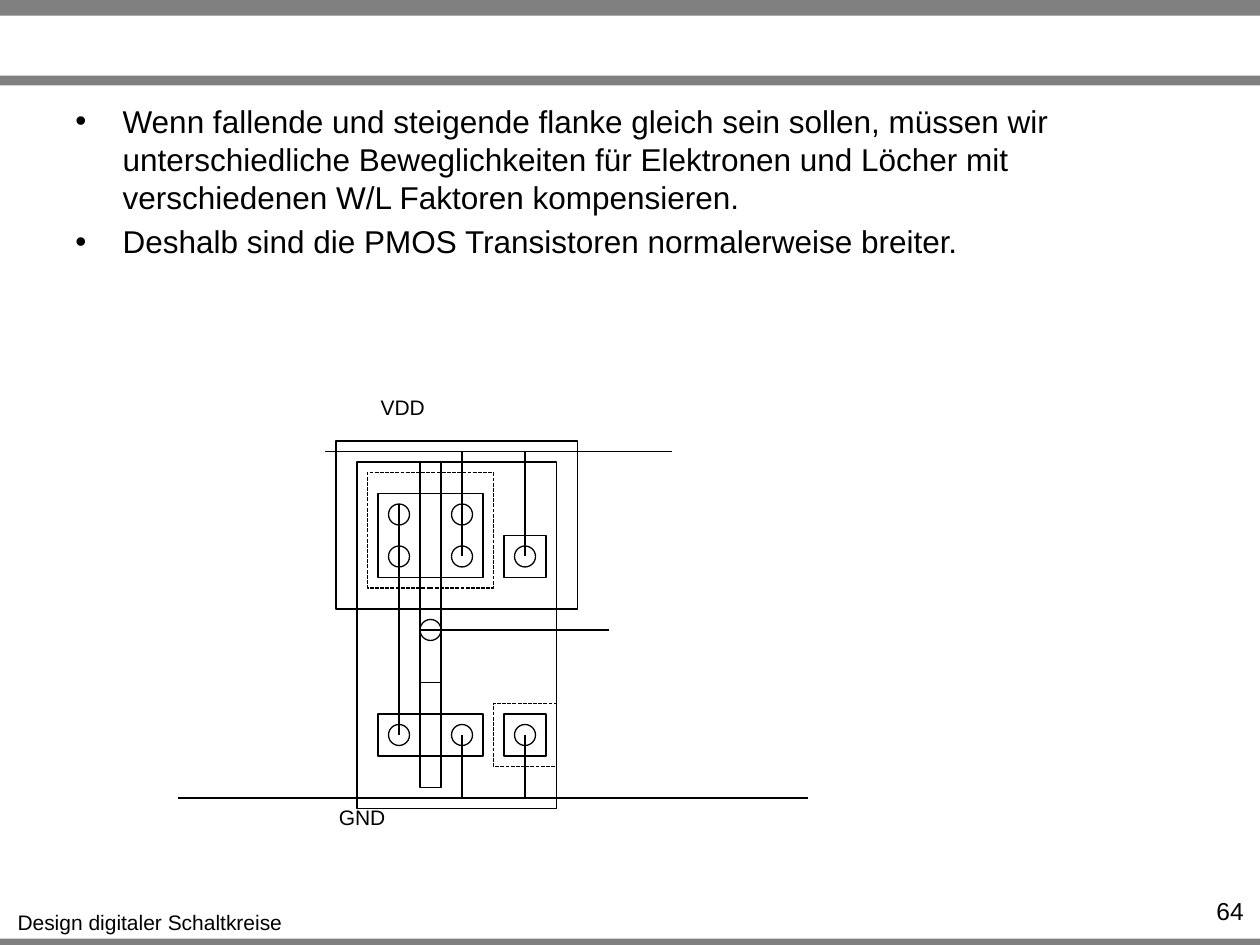
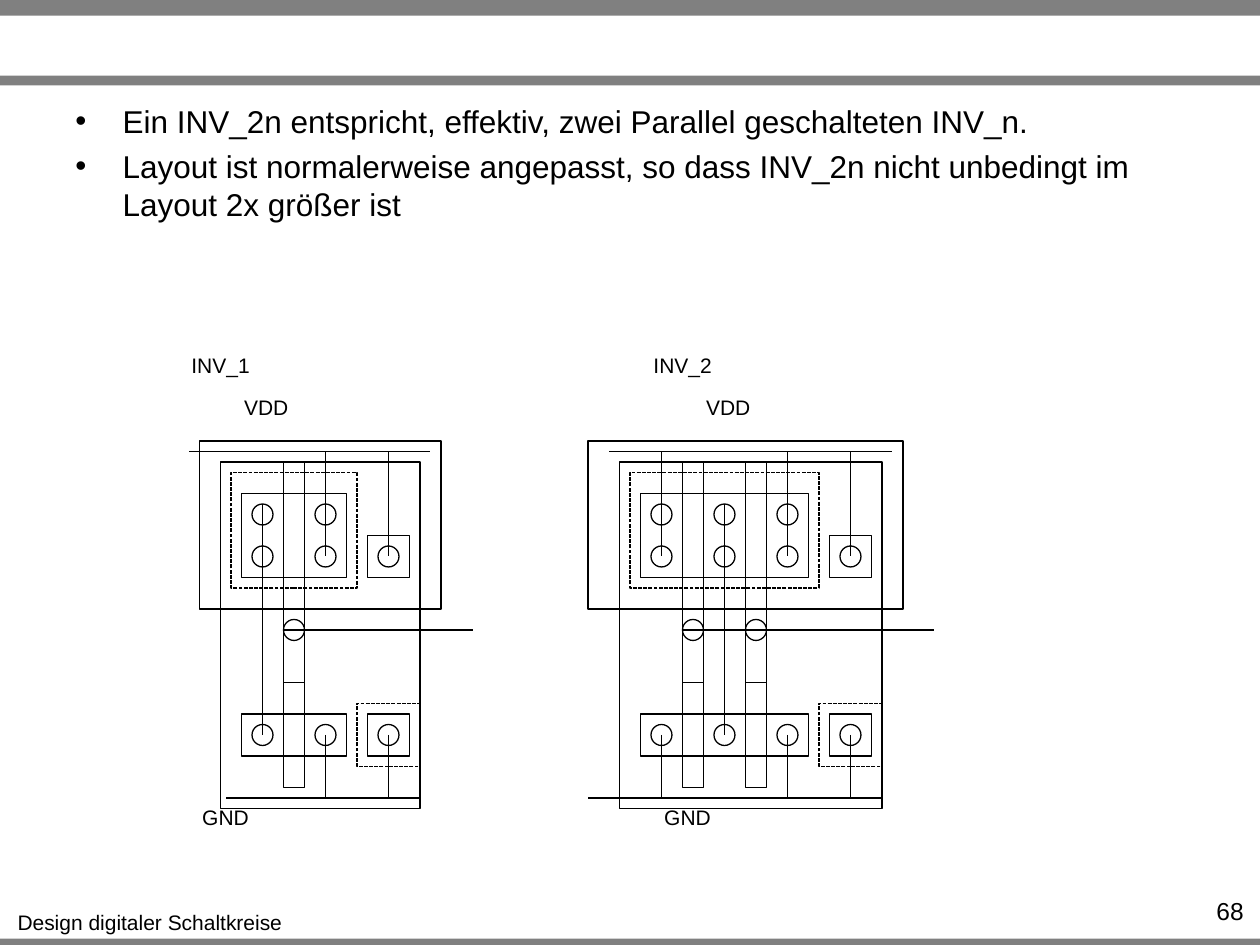
from dataclasses import dataclass

from lxml.etree import SubElement
from pptx import Presentation
from pptx.dml.color import RGBColor
from pptx.enum.dml import MSO_LINE
from pptx.enum.shapes import MSO_CONNECTOR, MSO_SHAPE
from pptx.enum.text import MSO_ANCHOR, PP_ALIGN
from pptx.oxml.ns import qn
from pptx.util import Pt


@dataclass(frozen=True)
class Theme:
    """Colours, type sizes and drawing grid shared by the deck."""
    font: str = "Arial"
    ink: RGBColor = RGBColor(0, 0, 0)
    band: RGBColor = RGBColor(0x80, 0x80, 0x80)
    body: int = 18
    number: int = 14
    label: int = 12
    line: float = 0.75
    grid: int = 6


@dataclass(frozen=True)
class Box:
    """A rectangle in points."""
    left: float
    top: float
    width: float
    height: float

    def lengths(self):
        """Return the four sides as slide lengths."""
        return [Pt(side) for side in (self.left, self.top, self.width, self.height)]


@dataclass(frozen=True)
class Inverter:
    """A cell: grid origin, fingers, well edge, rail spans and name."""
    left: float
    top: float
    fingers: int
    well_left: int
    supply: tuple
    ground: tuple
    name: str = ""


THEME = Theme()
WIDTH, HEIGHT = 720, 540
FINGER_PITCH = 6
CELL_TOP = 252


def add_text(page, box, text, size=THEME.label, align=PP_ALIGN.CENTER, wrap=False, bullet_indent=0, before=0):
    """Write each line of text as a paragraph in the box."""
    frame = page.shapes.add_textbox(*box.lengths()).text_frame
    frame.word_wrap = wrap
    frame.vertical_anchor = MSO_ANCHOR.TOP
    for index, line in enumerate(text.split("\n")):
        para = frame.add_paragraph() if index else frame.paragraphs[0]
        para.alignment = align
        para.space_before = Pt(before)
        if bullet_indent:
            properties = para._p.get_or_add_pPr()
            properties.set("marL", str(Pt(bullet_indent)))
            properties.set("indent", str(-Pt(bullet_indent)))
            SubElement(properties, qn("a:buFont"), typeface=THEME.font)
            SubElement(properties, qn("a:buChar"), char="•")
        span = para.add_run()
        span.text = line
        span.font.name = THEME.font
        span.font.size = Pt(size)
        span.font.color.rgb = THEME.ink


def add_band(page, box):
    """Draw a filled band without outline."""
    band = page.shapes.add_shape(MSO_SHAPE.RECTANGLE, *box.lengths())
    band.shadow.inherit = False
    band.fill.solid()
    band.fill.fore_color.rgb = THEME.band
    band.line.fill.background()


def style_line(line):
    """Apply the drawing stroke."""
    line.color.rgb = THEME.ink
    line.width = Pt(THEME.line)


class CellGrid:
    """Draws layout parts in grid units from the origin of a cell."""

    def __init__(self, page, cell):
        """Keep the page and the origin."""
        self.page = page
        self.cell = cell

    def box(self, x, y, width, height):
        """Convert grid units to a box in points."""
        unit = THEME.grid
        return Box(self.cell.left + x * unit, self.cell.top + y * unit, width * unit, height * unit)

    def outline(self, x, y, width, height, kind=MSO_SHAPE.RECTANGLE, dashed=False):
        """Draw an unfilled shape."""
        shape = self.page.shapes.add_shape(kind, *self.box(x, y, width, height).lengths())
        shape.shadow.inherit = False
        shape.fill.background()
        style_line(shape.line)
        if dashed:
            shape.line.dash_style = MSO_LINE.SQUARE_DOT

    def contact(self, x, y):
        """Draw a round contact."""
        self.outline(x, y, 2, 2, kind=MSO_SHAPE.OVAL)

    def wire(self, x1, y1, x2, y2):
        """Draw a straight wire."""
        start, end = self.box(x1, y1, 0, 0), self.box(x2, y2, 0, 0)
        wire = self.page.shapes.add_connector(
            MSO_CONNECTOR.STRAIGHT, Pt(start.left), Pt(start.top), Pt(end.left), Pt(end.top))
        style_line(wire.line)
        SubElement(wire.element.spPr, qn("a:effectLst"))

    def label(self, x, y, text, width):
        """Write a small label."""
        corner = self.box(x, y, 0, 0)
        add_text(self.page, Box(corner.left, corner.top, width, 21.6), text)


def draw_finger(grid, x):
    """Draw one transistor pair with its gate and input."""
    grid.outline(x, 5, 10, 8)
    grid.outline(x, 26, 10, 4)
    for top, height in ((2, 14), (16, 7), (23, 10)):
        grid.outline(x + 4, top, 2, height)
    grid.contact(x + 4, 17)
    grid.wire(x + 4, 18, x + 22, 18)


def draw_supply_wires(grid, x):
    """Join one column to both rails."""
    grid.wire(x, 1, x, 11)
    grid.wire(x, 28, x, 34)


def draw_taps(grid, x):
    """Draw the well and substrate taps."""
    grid.outline(x - 1, 25, 6, 6, dashed=True)
    for y in (9, 26):
        grid.outline(x, y, 4, 4)
        grid.contact(x + 1, y + 1)
    draw_supply_wires(grid, x + 2)


def draw_inverter(page, cell):
    """Draw a complete inverter cell."""
    grid = CellGrid(page, cell)
    span = FINGER_PITCH * cell.fingers
    grid.outline(cell.well_left, 0, span + 13 - cell.well_left, 16)
    grid.outline(-2, 2, span + 13, 33)
    grid.outline(-1, 3, span + 6, 11, dashed=True)
    for finger in range(cell.fingers):
        draw_finger(grid, finger * FINGER_PITCH)
    for column in range(cell.fingers + 1):
        x = 1 + column * FINGER_PITCH
        for y in (6, 10, 27):
            grid.contact(x, y)
        if (cell.fingers - column) % 2:
            grid.wire(x + 1, 6, x + 1, 28)
        else:
            draw_supply_wires(grid, x + 1)
    draw_taps(grid, span + 6)
    for y, rail in ((1, cell.supply), (34, cell.ground)):
        for start, end in rail:
            grid.wire(start, y, end, y)
    shift = span - FINGER_PITCH
    grid.label(shift - 1, -5, "VDD", 40.3)
    grid.label(shift - 5, 34, "GND", 41.8)
    if cell.name:
        grid.label(shift - 6, -9, cell.name, 48.2)


def draw_frame(page, box, number):
    """Draw the bands, footer and page number."""
    for top, height in ((0, 9), (43.2, 5.6), (536.4, 5.6)):
        add_band(page, Box(box.left, box.top + top, box.width, height))
    add_text(page, Box(box.left + 2.2, box.top + 516.2, 167, 21.6), "Design digitaler Schaltkreise")
    add_text(page, Box(box.left + 655.2, box.top + 508.3, 62.6, 17.3), number,
             size=THEME.number, align=PP_ALIGN.RIGHT, wrap=True)


def add_page(deck, number, text, cells):
    """Add a slide with bullets above its inverter cells."""
    page = deck.slides.add_slide(deck.slide_layouts[6])
    draw_frame(page, Box(0, 0, WIDTH, HEIGHT), number)
    add_text(page, Box(36, 54.7, 648, 101.5), text, size=THEME.body,
             align=PP_ALIGN.LEFT, wrap=True, bullet_indent=27, before=4)
    for cell in cells:
        draw_inverter(page, cell)


def main():
    """Build and save the deck."""
    deck = Presentation()
    deck.slide_width, deck.slide_height = Pt(WIDTH), Pt(HEIGHT)
    add_page(
        deck, "64",
        "Wenn fallende und steigende flanke gleich sein sollen, müssen wir unterschiedliche "
        "Beweglichkeiten für Elektronen und Löcher mit verschiedenen W/L Faktoren kompensieren.\n"
        "Deshalb sind die PMOS Transistoren normalerweise breiter.",
        [Inverter(216, CELL_TOP, 1, -4, ((8, 28), (15, -5)), ((7, 41), (16, -19)))])
    add_page(
        deck, "68",
        "Ein INV_2n entspricht, effektiv, zwei Parallel geschalteten INV_n.\n"
        "Layout ist normalerweise angepasst, so dass INV_2n nicht unbedingt im Layout 2x größer ist",
        [Inverter(138, CELL_TOP, 1, -4, ((8, 18), (15, -5)), ((7, 17), (16, -1.5)), "INV_1"),
         Inverter(366, CELL_TOP, 2, -5, ((14, 24), (21, -3)), ((13, 23), (22, -5)), "INV_2")])
    deck.save("out.pptx")


if __name__ == "__main__":
    main()
